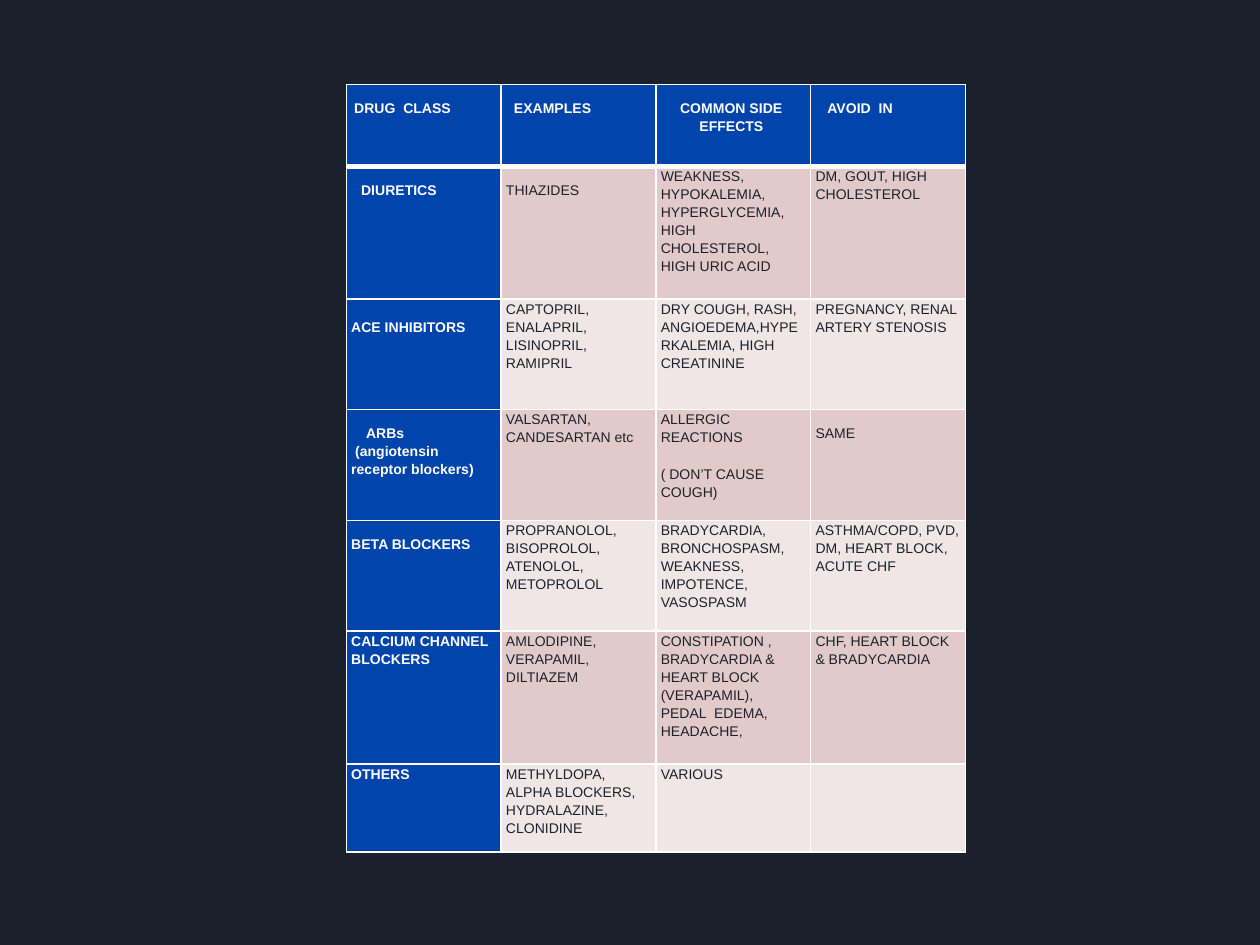
from dataclasses import dataclass

from lxml import etree
from pptx import Presentation
from pptx.dml.color import RGBColor
from pptx.oxml.ns import qn
from pptx.util import Cm, Pt

WHITE, NAVY, BLUE = "FFFFFF", "1B212C", "0145AC"
BANDS = ("E2CACA", "F1E6E6")
LEFT, TOP, COLUMN_WIDTH = Cm(6.98), Cm(1.7), Cm(3.12)
SIDE_MARGIN, SHORT_DROP, FULL_DROP = Cm(0.1), Cm(0.28), Cm(0.37)
LINE_SPACING, TEXT_SIZE = 1.15, Pt(8)


@dataclass(frozen=True)
class Line:
    """One paragraph with its first-line indent in cm and space before in points."""

    text: str
    indent: float = 0
    before: float = 0


@dataclass(frozen=True)
class Entry:
    """The lines of one table cell and the distance kept above them."""

    lines: tuple[Line, ...]
    drop: int = 0


@dataclass(frozen=True)
class DrugRow:
    """One table row: its height in cm and its entries."""

    height: float
    entries: tuple[Entry, ...]


def entry(text: str, indent: float = 0, drop: int = 0) -> Entry:
    """Make an entry of a single paragraph."""
    return Entry((Line(text, indent),), drop)


ROWS = (
    DrugRow(1.65, (
        entry("DRUG  CLASS", 0.06, SHORT_DROP),
        entry("EXAMPLES", 0.16, SHORT_DROP),
        Entry((Line("COMMON SIDE", 0.39), Line("EFFECTS", 0.78)), SHORT_DROP),
        entry("AVOID  IN", 0.24, SHORT_DROP),
    )),
    DrugRow(2.68, (
        entry("DIURETICS", 0.2, SHORT_DROP),
        entry("THIAZIDES", drop=SHORT_DROP),
        entry("WEAKNESS, HYPOKALEMIA, HYPERGLYCEMIA, HIGH CHOLESTEROL, HIGH URIC ACID"),
        entry("DM, GOUT, HIGH CHOLESTEROL"),
    )),
    DrugRow(2.23, (
        entry("ACE INHIBITORS", drop=FULL_DROP),
        entry("CAPTOPRIL, ENALAPRIL, LISINOPRIL, RAMIPRIL"),
        entry("DRY COUGH, RASH, ANGIOEDEMA,HYPERKALEMIA, HIGH CREATININE"),
        entry("PREGNANCY, RENAL ARTERY STENOSIS"),
    )),
    DrugRow(2.23, (
        Entry((Line("ARBs", 0.3), Line("(angiotensin receptor blockers)", 0.08)), SHORT_DROP),
        entry("VALSARTAN, CANDESARTAN etc"),
        Entry((Line("ALLERGIC REACTIONS"), Line("( DON’T CAUSE COUGH)", before=10.5))),
        entry("SAME", drop=SHORT_DROP),
    )),
    DrugRow(2.23, (
        entry("BETA BLOCKERS", drop=SHORT_DROP),
        entry("PROPRANOLOL, BISOPROLOL, ATENOLOL, METOPROLOL"),
        entry("BRADYCARDIA, BRONCHOSPASM, WEAKNESS, IMPOTENCE, VASOSPASM"),
        entry("ASTHMA/COPD, PVD, DM, HEART BLOCK, ACUTE CHF"),
    )),
    DrugRow(2.68, (
        entry("CALCIUM CHANNEL BLOCKERS"),
        entry("AMLODIPINE, VERAPAMIL, DILTIAZEM"),
        entry("CONSTIPATION , BRADYCARDIA & HEART BLOCK (VERAPAMIL),  PEDAL  EDEMA, HEADACHE,"),
        entry("CHF, HEART BLOCK & BRADYCARDIA"),
    )),
    DrugRow(1.78, (
        entry("OTHERS"),
        entry("METHYLDOPA, ALPHA BLOCKERS, HYDRALAZINE, CLONIDINE"),
        entry("VARIOUS"),
        Entry(()),
    )),
)


def color(value: str) -> RGBColor:
    """Turn a hex string into a colour."""
    return RGBColor.from_string(value)


def apply_format(target, values: dict) -> None:
    """Set each named attribute on the target."""
    for name, value in values.items():
        setattr(target, name, value)


def set_borders(cell, widths: dict[str, int]) -> None:
    """Draw white cell borders, with widths in points by side."""
    properties = cell._tc.get_or_add_tcPr()
    for side, width in widths.items():
        border = etree.SubElement(properties, qn(f"a:ln{side}"), w=str(Pt(width)))
        fill = etree.SubElement(border, qn("a:solidFill"))
        etree.SubElement(fill, qn("a:srgbClr"), val=WHITE)


def write_lines(cell, lines: tuple[Line, ...], heading: bool) -> None:
    """Write the lines of an entry into a cell."""
    frame = cell.text_frame
    for index, line in enumerate(lines):
        para = frame.add_paragraph() if index else frame.paragraphs[0]
        properties = para._p.get_or_add_pPr()
        properties.set("marL", "0")
        properties.set("indent", str(Cm(line.indent)))
        apply_format(para, {"line_spacing": LINE_SPACING, "space_before": Pt(line.before)})
        span = para.add_run()
        span.text = line.text
        apply_format(span.font, {"name": "Arial", "size": TEXT_SIZE, "bold": heading})
        span.font.color.rgb = color(WHITE if heading else NAVY)


def fill_cell(cell, content: Entry, row: int, column: int) -> None:
    """Style one cell by its place in the table and write its content."""
    heading = row == 0 or column == 0
    set_borders(cell, {"L": 1, "R": 1, "T": 3 if row == 1 else 1, "B": 3 if row == 0 else 1})
    cell.fill.solid()
    cell.fill.fore_color.rgb = color(BLUE if heading else BANDS[(row - 1) % 2])
    apply_format(cell, {
        "margin_left": SIDE_MARGIN,
        "margin_right": SIDE_MARGIN,
        "margin_top": content.drop,
        "margin_bottom": 0,
    })
    write_lines(cell, content.lines, heading)


def add_drug_table(page) -> None:
    """Add the table of drug classes to the page."""
    columns = len(ROWS[0].entries)
    height = Cm(sum(row.height for row in ROWS))
    table = page.shapes.add_table(
        len(ROWS), columns, LEFT, TOP, COLUMN_WIDTH * columns, height
    ).table
    apply_format(table, {"first_row": False, "horz_banding": False})
    for column in table.columns:
        column.width = COLUMN_WIDTH
    for row_index, row in enumerate(ROWS):
        table.rows[row_index].height = Cm(row.height)
        for column_index, content in enumerate(row.entries):
            fill_cell(table.cell(row_index, column_index), content, row_index, column_index)


def main() -> None:
    """Build the deck and save it."""
    deck = Presentation()
    apply_format(deck, {"slide_width": Cm(25.4), "slide_height": Cm(19.05)})
    page = deck.slides.add_slide(deck.slide_layouts[6])
    page.background.fill.solid()
    page.background.fill.fore_color.rgb = color(NAVY)
    add_drug_table(page)
    deck.save("out.pptx")


if __name__ == "__main__":
    main()
